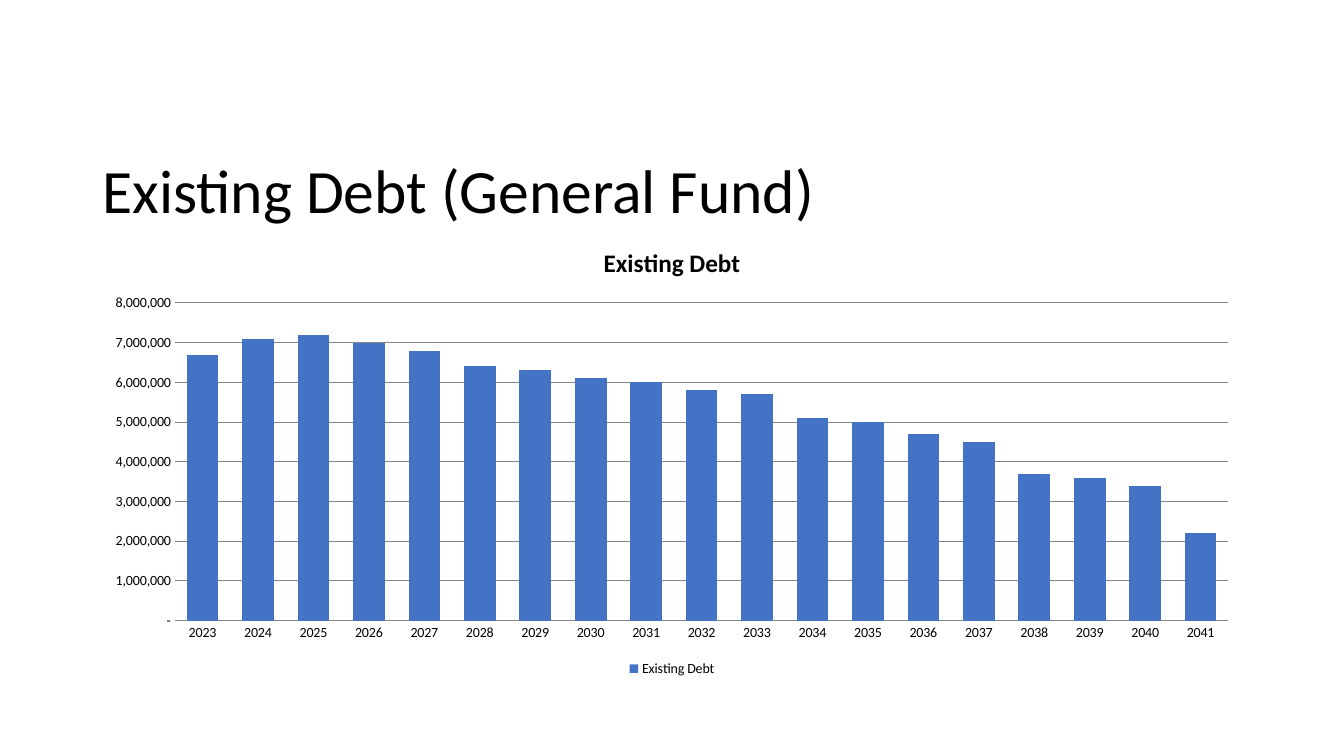
from dataclasses import dataclass

from pptx import Presentation
from pptx.chart.data import CategoryChartData
from pptx.dml.color import RGBColor
from pptx.enum.chart import XL_CHART_TYPE, XL_LEGEND_POSITION, XL_TICK_MARK
from pptx.enum.text import MSO_ANCHOR
from pptx.util import Cm, Pt

STACKED = XL_CHART_TYPE.COLUMN_STACKED
BOTTOM = XL_LEGEND_POSITION.BOTTOM
NO_TICK = XL_TICK_MARK.NONE
MIDDLE = MSO_ANCHOR.MIDDLE


@dataclass(frozen=True)
class Theme:
    """Colours, font and type sizes of the slide."""
    font: str = "Calibri"
    text: RGBColor = RGBColor(0x00, 0x00, 0x00)
    bar: RGBColor = RGBColor(0x44, 0x72, 0xC4)
    grid: RGBColor = RGBColor(0x86, 0x86, 0x86)
    title: int = 44
    chart_title: int = 18
    label: int = 10


THEME = Theme()
LEFT, WIDTH = Cm(2.33), Cm(29.21)
FIRST_YEAR = 2023
DEBT_MILLIONS = [6.7, 7.1, 7.2, 7.0, 6.8, 6.4, 6.3, 6.1, 6.0, 5.8,
                 5.7, 5.1, 5.0, 4.7, 4.5, 3.7, 3.6, 3.4, 2.2]


def style_font(font, size, bold=False):
    """Apply the theme font at a given size."""
    font.name = THEME.font
    font.size = Pt(size)
    font.bold = bold
    font.color.rgb = THEME.text


def style_line(line):
    """Draw a thin line in the grid colour."""
    line.color.rgb = THEME.grid
    line.width = Pt(0.75)


def add_title(s, text):
    """Add the slide title."""
    tf = s.shapes.add_textbox(LEFT, Cm(3.56), WIDTH, Cm(2.62)).text_frame
    tf.word_wrap = True
    tf.vertical_anchor = MIDDLE
    p = tf.paragraphs[0]
    p.line_spacing = 0.9
    r = p.add_run()
    r.text = text
    style_font(r.font, THEME.title)


def style_axes(chart):
    """Format both axes and the gridlines."""
    for axis in (chart.category_axis, chart.value_axis):
        axis.major_tick_mark = NO_TICK
        axis.minor_tick_mark = NO_TICK
    style_line(chart.category_axis.format.line)
    value_axis = chart.value_axis
    value_axis.minimum_scale = 0
    value_axis.maximum_scale = 8_000_000
    value_axis.major_unit = 1_000_000
    value_axis.format.line.fill.background()
    value_axis.has_major_gridlines = True
    style_line(value_axis.major_gridlines.format.line)
    value_axis.tick_labels.number_format = '#,##0;(#,##0);"-"'
    value_axis.tick_labels.number_format_is_linked = False


def add_debt_chart(s, name):
    """Add the column chart of debt by year."""
    data = CategoryChartData()
    data.categories = [str(FIRST_YEAR + i) for i in range(len(DEBT_MILLIONS))]
    data.add_series(name, [round(v * 1_000_000) for v in DEBT_MILLIONS])
    chart = s.shapes.add_chart(STACKED, LEFT, Cm(5.69), WIDTH, Cm(11.46), data).chart
    style_font(chart.font, THEME.label)
    chart.has_title = True
    r = chart.chart_title.text_frame.paragraphs[0].add_run()
    r.text = name
    style_font(r.font, THEME.chart_title, bold=True)
    chart.has_legend = True
    chart.legend.position = BOTTOM
    chart.legend.include_in_layout = False
    style_axes(chart)
    plot = chart.plots[0]
    plot.gap_width = 75
    plot.overlap = 100
    plot.vary_by_categories = False
    fill = plot.series[0].format.fill
    fill.solid()
    fill.fore_color.rgb = THEME.bar


def main():
    """Build and save the slide."""
    prs = Presentation()
    prs.slide_width, prs.slide_height = Cm(33.87), Cm(19.05)
    s = prs.slides.add_slide(prs.slide_layouts[6])
    add_title(s, "Existing Debt (General Fund)")
    add_debt_chart(s, "Existing Debt")
    prs.save("out.pptx")


if __name__ == "__main__":
    main()
